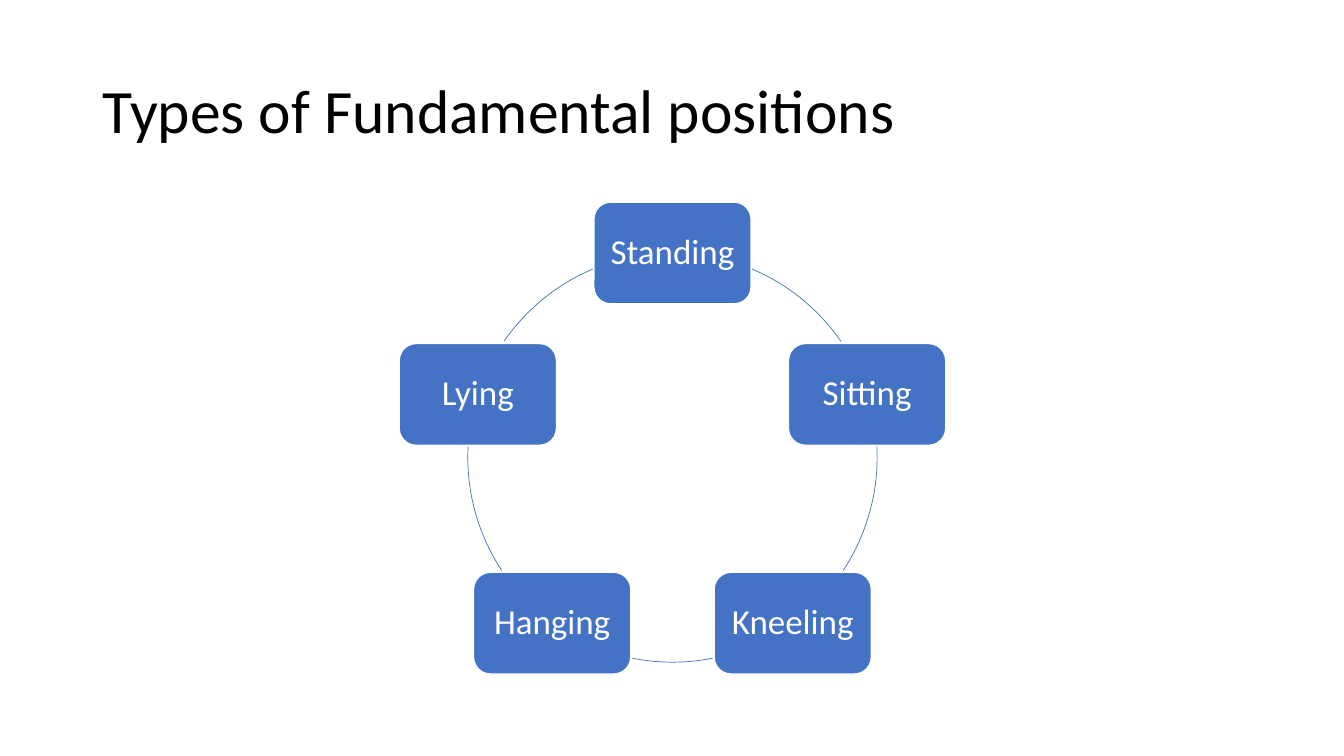
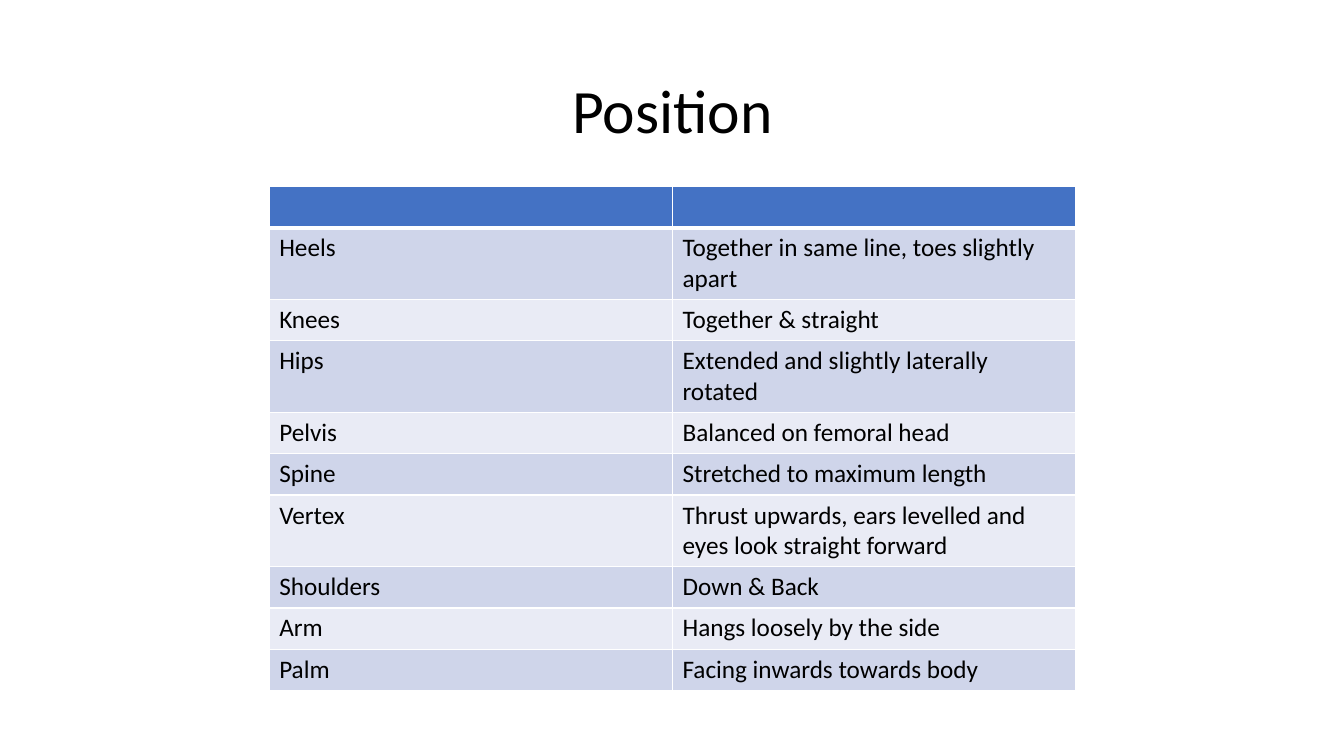
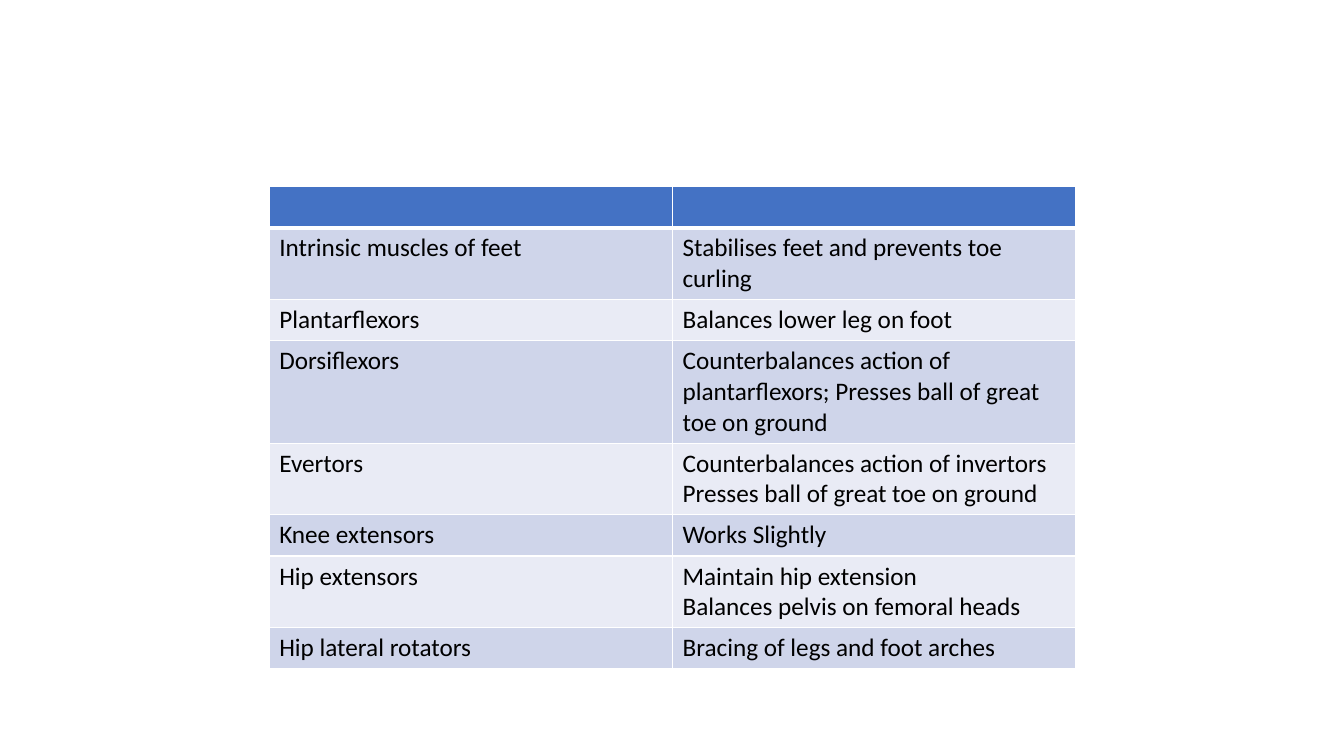
import math
from dataclasses import dataclass

import lxml.etree
import pptx
import pptx.dml.color
import pptx.enum.shapes
import pptx.enum.text
import pptx.oxml.ns
import pptx.util

Inches = pptx.util.Inches
Pt = pptx.util.Pt
ALIGN = pptx.enum.text.PP_ALIGN
SHAPE = pptx.enum.shapes.MSO_SHAPE


@dataclass(frozen=True)
class Theme:
    font: str = "Calibri"
    text: str = "000000"
    light: str = "FFFFFF"
    accent: str = "4472C4"
    bands: tuple = ("CFD5EA", "E9EBF5")
    title_size: int = 44
    box_size: int = 25
    cell_size: int = 18
    thin: float = 0.5
    line: int = 1
    header_line: int = 3


THEME = Theme()

CYCLE_TITLE = "Types of Fundamental positions"
POSITIONS = ["Standing", "Sitting", "Kneeling", "Hanging", "Lying"]
ARCS = [(-67.1, -34.6), (-3.1, 33.5), (78.6, 101.4), (146.5, 183.1), (214.6, 247.1)]

POSITION_TITLE = "Position"
BODY_PARTS = [
    ("Heels", "Together in same line, toes slightly apart"),
    ("Knees", "Together & straight"),
    ("Hips", "Extended and slightly laterally rotated"),
    ("Pelvis", "Balanced on femoral head"),
    ("Spine", "Stretched to maximum length"),
    ("Vertex", "Thrust upwards, ears levelled and eyes look straight forward"),
    ("Shoulders", "Down & Back"),
    ("Arm", "Hangs loosely by the side"),
    ("Palm", "Facing inwards towards body"),
]
MUSCLES = [
    ("Intrinsic muscles of feet", "Stabilises feet and prevents toe curling"),
    ("Plantarflexors", "Balances lower leg on foot"),
    ("Dorsiflexors", "Counterbalances action of plantarflexors; Presses ball of great toe on ground"),
    ("Evertors", "Counterbalances action of invertors Presses ball of great toe on ground"),
    ("Knee extensors", "Works Slightly"),
    ("Hip extensors", "Maintain hip extension\nBalances pelvis on femoral heads"),
    ("Hip lateral rotators", "Bracing of legs and foot arches"),
]

CENTER_X, CENTER_Y, RADIUS = 6.67, 4.54, 2.03
BOX_W, BOX_H = 1.56, 1.01


def rgb(value):
    return pptx.dml.color.RGBColor.from_string(value)


def format_text(tf, size, color, align=ALIGN.LEFT, spacing=None):
    for p in tf.paragraphs:
        p.alignment = align
        p.line_spacing = spacing
        for r in p.runs:
            r.font.name = THEME.font
            r.font.size = Pt(size)
            r.font.color.rgb = rgb(color)


def add_slide(prs, title=None, align=ALIGN.LEFT):
    s = prs.slides.add_slide(prs.slide_layouts[5 if title else 6])
    if title:
        sp = s.shapes.title
        sp.left, sp.top, sp.width, sp.height = map(Inches, (0.92, 0.4, 11.5, 1.45))
        tf = sp.text_frame
        tf.text = title
        tf.auto_size = pptx.enum.text.MSO_AUTO_SIZE.NONE
        tf.vertical_anchor = pptx.enum.text.MSO_ANCHOR.MIDDLE
        format_text(tf, THEME.title_size, THEME.text, align, 0.9)
    return s


def add_preset(s, kind, width, height, x, y, line, weight):
    sp = s.shapes.add_shape(
        kind, Inches(x - width / 2), Inches(y - height / 2), Inches(width), Inches(height)
    )
    sp.shadow.inherit = False
    sp.line.color.rgb = rgb(line)
    sp.line.width = Pt(weight)
    return sp


def add_cycle(s):
    for start, end in ARCS:
        arc = add_preset(s, SHAPE.ARC, 2 * RADIUS, 2 * RADIUS, CENTER_X, CENTER_Y,
                         THEME.accent, THEME.thin)
        arc.fill.background()
        for i, degrees in enumerate((start, end)):
            arc.adjustments[i] = degrees % 360 * 0.6
    for i, label in enumerate(POSITIONS):
        angle = 2 * math.pi * i / len(POSITIONS)
        x = CENTER_X + RADIUS * math.sin(angle)
        y = CENTER_Y - RADIUS * math.cos(angle)
        box = add_preset(s, SHAPE.ROUNDED_RECTANGLE, BOX_W, BOX_H, x, y,
                         THEME.light, THEME.line)
        box.fill.solid()
        box.fill.fore_color.rgb = rgb(THEME.accent)
        tf = box.text_frame
        tf.text = label
        tf.word_wrap = True
        tf.vertical_anchor = pptx.enum.text.MSO_ANCHOR.MIDDLE
        tf.margin_left = tf.margin_right = Inches(0.1)
        format_text(tf, THEME.box_size, THEME.light, ALIGN.CENTER, 0.9)


def set_borders(cell, weights):
    qn = pptx.oxml.ns.qn
    tcPr = cell._tc.get_or_add_tcPr()
    for side, weight in weights.items():
        ln = lxml.etree.SubElement(tcPr, qn("a:ln" + side), w=str(Pt(weight)))
        fill = lxml.etree.SubElement(ln, qn("a:solidFill"))
        lxml.etree.SubElement(fill, qn("a:srgbClr"), val=THEME.light)


def add_grid(s, content):
    rows = [("", "")] + content
    row_h = Inches(0.41)
    table = s.shapes.add_table(
        len(rows), 2, Inches(2.67), Inches(1.85), Inches(8), row_h * len(rows)
    ).table
    for i, row in enumerate(rows):
        table.rows[i].height = row_h
        weights = dict.fromkeys("LRTB", THEME.line)
        if i < 2:
            weights["BT"[i]] = THEME.header_line
        for j, text in enumerate(row):
            cell = table.cell(i, j)
            cell.text_frame.text = text
            format_text(cell.text_frame, THEME.cell_size, THEME.text)
            set_borders(cell, weights)
            cell.fill.solid()
            cell.fill.fore_color.rgb = rgb(THEME.bands[(i - 1) % 2] if i else THEME.accent)


def main():
    prs = pptx.Presentation()
    prs.slide_width, prs.slide_height = Inches(13.33), Inches(7.5)
    add_cycle(add_slide(prs, CYCLE_TITLE))
    add_grid(add_slide(prs, POSITION_TITLE, ALIGN.CENTER), BODY_PARTS)
    add_grid(add_slide(prs), MUSCLES)
    prs.save("out.pptx")


if __name__ == "__main__":
    main()
